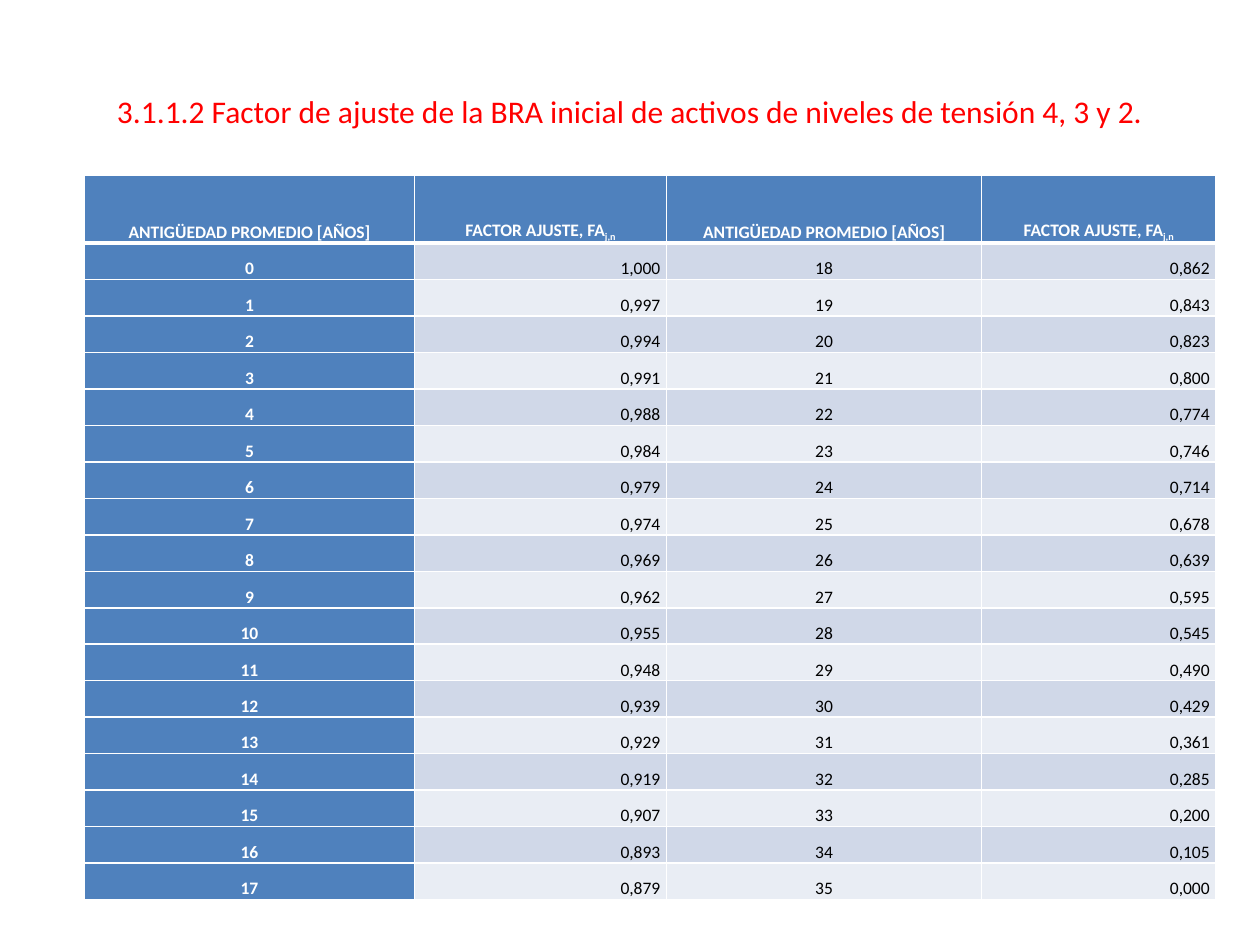
from dataclasses import dataclass

from lxml.etree import SubElement
from pptx import Presentation
from pptx.dml.color import RGBColor as Color
from pptx.enum.text import MSO_ANCHOR as Anchor, PP_ALIGN as Align
from pptx.oxml.ns import qn
from pptx.util import Inches, Pt


@dataclass(frozen=True)
class Theme:
    """Colours, font and sizes of the slide."""
    font: str = "Calibri"
    title_size: int = 18
    table_size: int = 10
    title: str = "FF0000"
    header: str = "4F81BD"
    light: str = "FFFFFF"
    dark: str = "000000"
    bands: tuple = ("D0D8E8", "E9EDF4")


THEME = Theme()
TITLE = "3.1.1.2 Factor de ajuste de la BRA inicial de activos de niveles de tensión 4, 3 y 2."
AGE_HEADING = "ANTIGÜEDAD PROMEDIO [AÑOS]"
FACTOR_HEADING = "FACTOR AJUSTE, FA"
FACTOR_INDEX = "j,n"
FACTORS = (
    "1,000 0,997 0,994 0,991 0,988 0,984 0,979 0,974 0,969 "
    "0,962 0,955 0,948 0,939 0,929 0,919 0,907 0,893 0,879 "
    "0,862 0,843 0,823 0,800 0,774 0,746 0,714 0,678 0,639 "
    "0,595 0,545 0,490 0,429 0,361 0,285 0,200 0,105 0,000"
).split()
HALF = len(FACTORS) // 2
COLUMN_WIDTHS = (2.62, 2, 2.5, 1.86)
HEADER_HEIGHT = 0.54
TABLE_HEIGHT = 5.75


def style_runs(paragraph, size, color, bold=False):
    """Apply one font style to every run of a paragraph."""
    for run in paragraph.runs:
        run.font.name = THEME.font
        run.font.size = Pt(size)
        run.font.bold = bold
        run.font.color.rgb = Color.from_string(color)


def set_borders(cell, bottom=1):
    """Draw white cell borders, with a chosen bottom width in points."""
    properties = cell._tc.get_or_add_tcPr()
    for side, width in (("L", 1), ("R", 1), ("T", 1), ("B", bottom)):
        line = SubElement(properties, qn(f"a:ln{side}"), w=str(Pt(width)))
        fill = SubElement(line, qn("a:solidFill"))
        SubElement(fill, qn("a:srgbClr"), val=THEME.light)


def format_cell(cell, text, fill, color, align=Align.CENTER, bold=False, index="", bottom=1):
    """Fill one table cell with text, an optional subscript and its style."""
    set_borders(cell, bottom)
    cell.fill.solid()
    cell.fill.fore_color.rgb = Color.from_string(fill)
    cell.vertical_anchor = Anchor.BOTTOM
    cell.margin_left = cell.margin_right = Inches(0.05)
    cell.margin_top = cell.margin_bottom = 0
    paragraph = cell.text_frame.paragraphs[0]
    paragraph.text = text
    paragraph.alignment = align
    paragraph.space_before = Pt(12)
    if index:
        subscript = paragraph.add_run()
        subscript.text = index
        subscript.font._element.set("baseline", "-25000")
    style_runs(paragraph, THEME.table_size, color, bold)


def add_title(slide):
    """Add the section title."""
    box = slide.shapes.add_textbox(Inches(0.83), Inches(0.68), Inches(8.58), Inches(0.4))
    frame = box.text_frame
    frame.word_wrap = True
    frame.text = TITLE
    style_runs(frame.paragraphs[0], THEME.title_size, THEME.title)


def add_factor_table(slide):
    """Add the ages and factors, split into two halves side by side."""
    frame = slide.shapes.add_table(
        HALF + 1, len(COLUMN_WIDTHS), Inches(0.67), Inches(1.39),
        Inches(sum(COLUMN_WIDTHS)), Inches(TABLE_HEIGHT))
    table = frame.table
    table.first_col = True
    for column, width in zip(table.columns, COLUMN_WIDTHS):
        column.width = Inches(width)
    for row in table.rows:
        row.height = Inches((TABLE_HEIGHT - HEADER_HEIGHT) / HALF)
    table.rows[0].height = Inches(HEADER_HEIGHT)

    for column in (0, 2):
        for offset, text, index in ((0, AGE_HEADING, ""), (1, FACTOR_HEADING, FACTOR_INDEX)):
            format_cell(table.cell(0, column + offset), text, THEME.header, THEME.light,
                        bold=True, index=index, bottom=3)
    for age, factor in enumerate(FACTORS):
        half, row = divmod(age, HALF)
        band = THEME.bands[row % 2]
        first = half == 0
        format_cell(table.cell(row + 1, 2 * half), str(age),
                    THEME.header if first else band,
                    THEME.light if first else THEME.dark, bold=first)
        format_cell(table.cell(row + 1, 2 * half + 1), factor, band, THEME.dark, Align.RIGHT)


def main():
    """Build and save the slide."""
    presentation = Presentation()
    presentation.slide_width = Inches(10)
    presentation.slide_height = Inches(7.5)
    slide = presentation.slides.add_slide(presentation.slide_layouts[6])
    add_title(slide)
    add_factor_table(slide)
    presentation.save("out.pptx")


if __name__ == "__main__":
    main()
